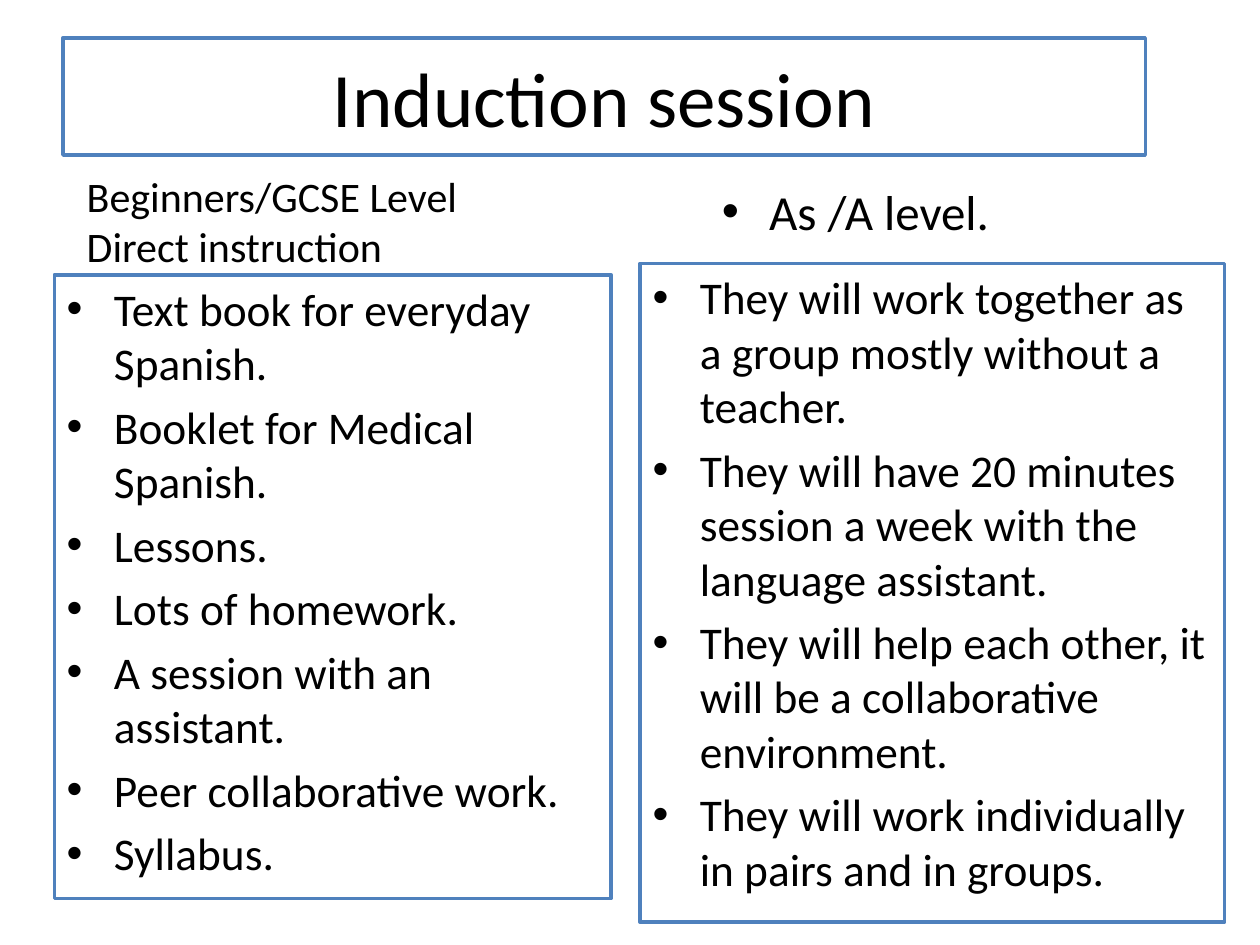
from pptx import Presentation
from pptx.dml.color import RGBColor
from pptx.enum.shapes import MSO_SHAPE as Shape
from pptx.enum.text import MSO_ANCHOR as Anchor, MSO_AUTO_SIZE as AutoSize, PP_ALIGN as Align
from pptx.oxml.ns import qn
from pptx.util import Pt
from lxml.etree import SubElement


def color(value):
    return RGBColor.from_string(value)


def write(frame, lines, size, align=Align.LEFT, bulleted=False):
    frame.word_wrap = True
    for index, line in enumerate(lines):
        paragraph = frame.paragraphs[0] if index == 0 else frame.add_paragraph()
        paragraph.alignment = align
        run = paragraph.add_run()
        run.text = line
        run.font.size = Pt(size)
        run.font.name = "Calibri"
        run.font.color.rgb = color("000000")
        if bulleted:
            paragraph.space_before = Pt(round(size * 0.2, 1))
            properties = paragraph._p.get_or_add_pPr()
            properties.set("marL", str(Pt(27)))
            properties.set("indent", str(Pt(-27)))
            SubElement(properties, qn("a:buFont")).set("typeface", "Arial")
            SubElement(properties, qn("a:buChar")).set("char", "•")


beginner_activities = [
    "Text book for everyday Spanish.",
    "Booklet for Medical Spanish.",
    "Lessons.",
    "Lots of homework.",
    "A session with an assistant.",
    "Peer collaborative work.",
    "Syllabus.",
]
advanced_activities = [
    "They will work together as a group mostly without a teacher.",
    "They will have 20 minutes session a week with the language assistant.",
    "They will help each other, it will be a collaborative environment.",
    "They will work individually in pairs and in groups.",
]
panels = [
    ((36, 21.6, 618.5, 67), ["Induction session"], 44, Align.CENTER, Anchor.MIDDLE, False),
    ((31, 157, 318.2, 356.4), beginner_activities, 25.9, Align.LEFT, Anchor.TOP, True),
    ((365.8, 150.5, 334, 376.5), advanced_activities, 25.9, Align.LEFT, Anchor.TOP, True),
]
headings = [
    ((42.5, 93.6, 266.4, 65.5), ["Beginners/GCSE Level", "Direct instruction"], 24, False),
    ((405.4, 100, 187.2, 41), ["As /A level."], 28, True),
]

deck = Presentation()
deck.slide_width, deck.slide_height = Pt(720), Pt(540)
slide = deck.slides.add_slide(deck.slide_layouts[6])

for bounds, lines, size, align, anchor, bulleted in panels:
    panel = slide.shapes.add_shape(Shape.RECTANGLE, *map(Pt, bounds))
    panel.shadow.inherit = False
    panel.fill.solid()
    panel.fill.fore_color.rgb = color("FFFFFF")
    panel.line.color.rgb = color("4F81BD")
    panel.line.width = Pt(2)
    panel.text_frame.vertical_anchor = anchor
    write(panel.text_frame, lines, size, align, bulleted)

for bounds, lines, size, bulleted in headings:
    heading = slide.shapes.add_textbox(*map(Pt, bounds))
    write(heading.text_frame, lines, size, bulleted=bulleted)
    heading.text_frame.auto_size = AutoSize.SHAPE_TO_FIT_TEXT

deck.save("out.pptx")
